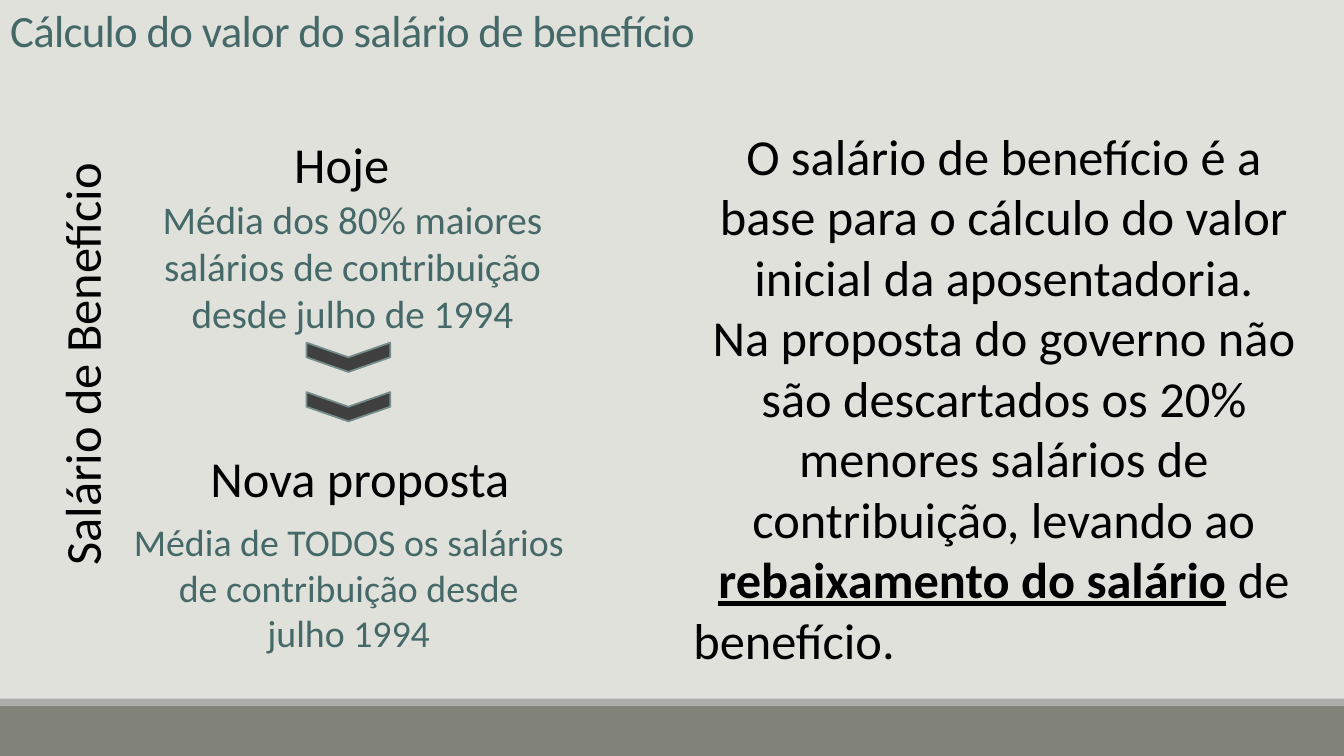
from pptx import Presentation
from pptx import util as u
from pptx.dml.color import RGBColor
from pptx.enum import shapes, text

COLORS = {
    "background": "E1E1DB",
    "footer": "82847C",
    "footer_edge": "ACADA8",
    "teal": "456968",
    "black": "000000",
    "chevron": "404040",
    "chevron_line": "748D8D",
}
CENTER = text.PP_ALIGN.CENTER
LEFT = text.PP_ALIGN.LEFT


def color(name):
    return RGBColor.from_string(COLORS[name])


def add_text(paragraph, content, size=36, ink="black", strong=False, spacing=None):
    for index, line in enumerate(content.split("\n")):
        if index:
            paragraph.add_line_break()
        run = paragraph.add_run()
        run.text = line
        run.font.name = "Calibri"
        run.font.size = u.Pt(size)
        run.font.color.rgb = color(ink)
        run.font.bold = run.font.underline = strong
        if spacing is not None:
            run.font._element.set("spc", str(spacing))


class SlideBuilder:
    def __init__(self, presentation):
        self.unit_x = presentation.slide_width / 100
        self.unit_y = presentation.slide_height / 100
        self.slide = presentation.slides.add_slide(presentation.slide_layouts[5])
        self.slide.background.fill.solid()
        self.slide.background.fill.fore_color.rgb = color("background")

    def box(self, left, top, width, height):
        return (round(left * self.unit_x), round(top * self.unit_y),
                round(width * self.unit_x), round(height * self.unit_y))

    def title(self, content, *share):
        title = self.slide.shapes.title
        title.left, title.top, title.width, title.height = self.box(*share)
        frame = title.text_frame
        frame.auto_size = text.MSO_AUTO_SIZE.NONE
        frame.vertical_anchor = text.MSO_ANCHOR.BOTTOM
        paragraph = frame.paragraphs[0]
        paragraph.alignment = LEFT
        paragraph.line_spacing = 0.85
        add_text(paragraph, content, size=32, ink="teal", spacing=-50)

    def text_box(self, paragraphs, *share, upward=False, **style):
        frame = self.slide.shapes.add_textbox(*self.box(*share)).text_frame
        frame.word_wrap = True
        if upward:
            frame._txBody.bodyPr.set("vert", "vert270")
        for index, (alignment, *pieces) in enumerate(paragraphs):
            paragraph = frame.add_paragraph() if index else frame.paragraphs[0]
            paragraph.alignment = alignment
            for piece, strong in pieces:
                add_text(paragraph, piece, strong=strong, **style)

    def label(self, content, *share, alignment=CENTER, **style):
        self.text_box([(alignment, (content, False))], *share, **style)

    def shape(self, kind, fill, *share, line=None, rotation=0):
        shape = self.slide.shapes.add_shape(kind, *self.box(*share))
        shape.shadow.inherit = False
        shape.rotation = rotation
        shape.fill.solid()
        shape.fill.fore_color.rgb = color(fill)
        if line:
            shape.line.color.rgb = color(line)
            shape.line.width = u.Pt(1.25)
        else:
            shape.line.fill.background()


def main():
    presentation = Presentation()
    presentation.slide_width = u.Inches(13.33)
    presentation.slide_height = u.Inches(7.5)
    builder = SlideBuilder(presentation)

    rectangle = shapes.MSO_SHAPE.RECTANGLE
    builder.shape(rectangle, "footer", 0, 93.33, 100, 6.67)
    builder.shape(rectangle, "footer_edge", 0, 92.4, 100, 0.93)
    builder.title("Cálculo do valor do salário de benefício", 0, -1.6, 93.75, 9.73)

    builder.label("Salário de Benefício", 3.38, 15.87, 6.08, 60.27,
                  alignment=LEFT, upward=True)
    builder.label("Hoje", 21.15, 16.93, 10.05, 9.47, alignment=LEFT)
    builder.label("Média dos 80% maiores salários de contribuição desde julho de 1994",
                  10.88, 25.2, 30.68, 20.13, size=28, ink="teal")
    for step in range(2):
        builder.shape(shapes.MSO_SHAPE.CHEVRON, "chevron",
                      24.83, 41.73 + 6.54 * step, 2.18, 11.07,
                      line="chevron_line", rotation=90)
    builder.label("Nova proposta", 12.3, 58.53, 28.95, 9.47)
    builder.label("Média de TODOS os salários de contribuição desde\njulho 1994",
                  9, 68, 33.9, 19.47, size=27, ink="teal")

    builder.text_box([
        (CENTER, ("O salário de benefício é a base para o cálculo do valor "
                  "inicial da aposentadoria.", False)),
        (CENTER, ("Na proposta do governo não são descartados os 20% menores "
                  "salários de contribuição, levando ao ", False),
         ("rebaixamento do salário", True), (" de", False)),
        (LEFT, ("benefício.", False)),
    ], 50.85, 15.87, 47.7, 74)

    presentation.save("out.pptx")


if __name__ == "__main__":
    main()
